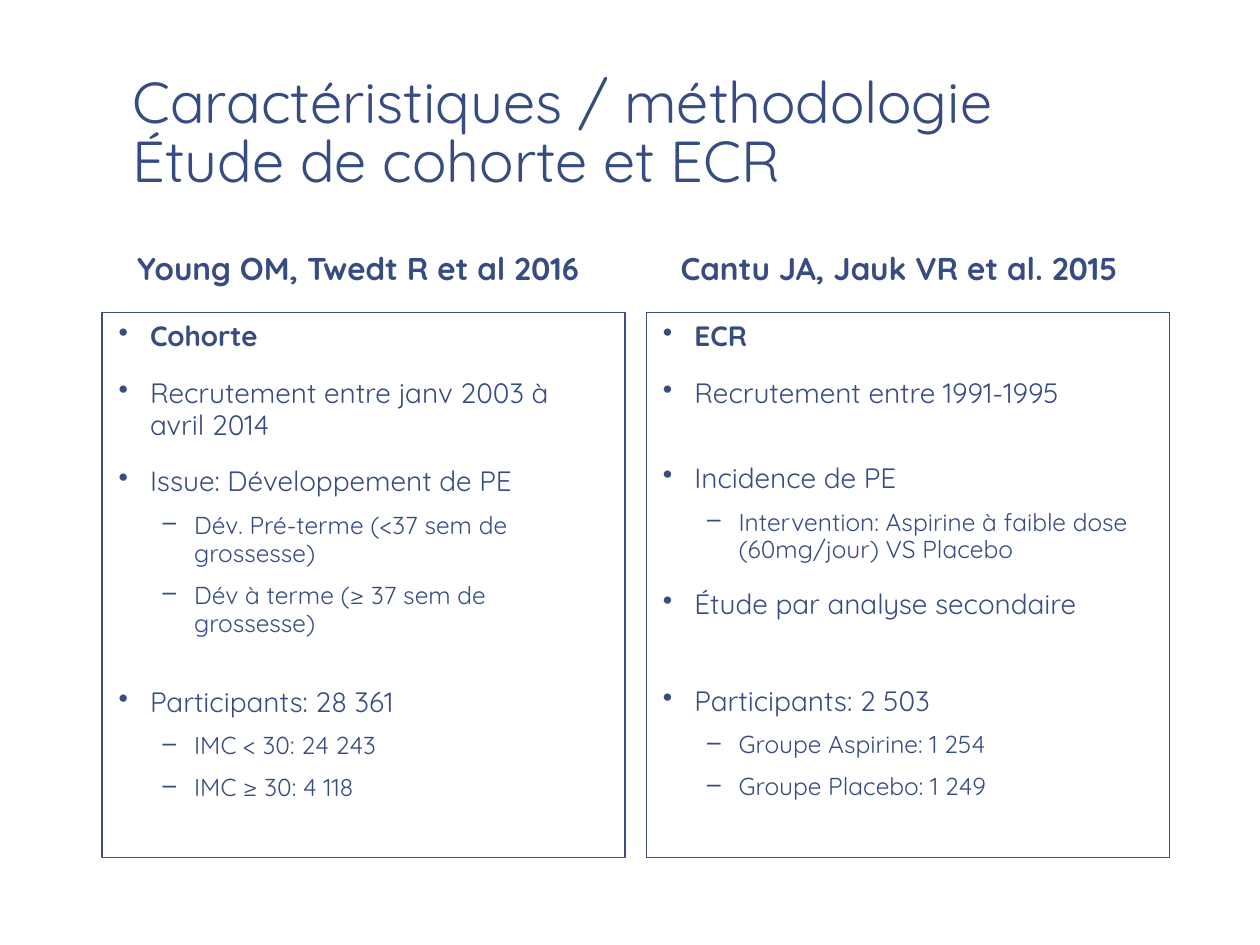
from lxml import etree
from pptx import Presentation
from pptx.dml.color import RGBColor
from pptx.enum.text import MSO_ANCHOR
from pptx.oxml.ns import qn
from pptx.util import Pt

TOP = MSO_ANCHOR.TOP
LOW = MSO_ANCHOR.BOTTOM
FONT = "Quicksand"
INK = "374C81"
EDGE = "414E77"
LEVELS = [
    {"mark": "•", "left": 18, "size": 16, "gap": 14},
    {"mark": "–", "left": 43.2, "size": 14, "gap": 8},
]
HANG = 18


def color(code):
    return RGBColor.from_string(code)


def apply(target, values):
    for name, value in values.items():
        setattr(target, name, value)


class Deck:
    def __init__(self):
        self.show = Presentation()
        apply(self.show, {"slide_width": Pt(720), "slide_height": Pt(540)})
        self.slide = self.show.slides.add_slide(self.show.slide_layouts[6])

    def frame(self, area, anchor):
        box = self.slide.shapes.add_textbox(*map(Pt, area))
        apply(box.text_frame, {
            "word_wrap": True, "vertical_anchor": anchor,
            "margin_left": Pt(9.4), "margin_right": Pt(9.4),
            "margin_top": Pt(5), "margin_bottom": Pt(5),
        })
        return box

    def fill(self, para, text, size, bold, lead):
        para.text = text
        para.line_spacing = lead
        for run in para.runs:
            apply(run.font, {"name": FONT, "size": Pt(size), "bold": bold})
            run.font.color.rgb = color(INK)

    def label(self, area, text, size, bold, lead):
        box = self.frame(area, LOW)
        self.fill(box.text_frame.paragraphs[0], text, size, bold, lead)

    def panel(self, area, items):
        box = self.frame(area, TOP)
        box.line.color.rgb = color(EDGE)
        box.line.width = Pt(0.75)
        body = box.text_frame
        for i, (level, text, *gap) in enumerate(items):
            para = body.add_paragraph() if i else body.paragraphs[0]
            self.bullet(para, level)
            style = LEVELS[level]
            self.fill(para, text, style["size"], i == 0, 0.95)
            if i:
                para.space_before = Pt(gap[0] if gap else style["gap"])

    def bullet(self, para, level):
        para.level = level
        style = LEVELS[level]
        props = para._p.get_or_add_pPr()
        props.set("marL", str(Pt(style["left"])))
        props.set("indent", str(-Pt(HANG)))
        etree.SubElement(props, qn("a:buChar")).set("char", style["mark"])


def main():
    deck = Deck()
    deck.label((66.25, 5.75, 600, 110.2),
               "Caractéristiques / méthodologie\vÉtude de cohorte et ECR",
               33, False, 0.85)
    cohort = [
        (0, "Cohorte"),
        (0, "Recrutement entre janv 2003 à avril 2014"),
        (0, "Issue: Développement de PE"),
        (1, "Dév. Pré-terme (<37 sem de grossesse)"),
        (1, "Dév à terme (≥ 37 sem de grossesse)"),
        (0, "Participants: 28 361", 28),
        (1, "IMC < 30: 24 243"),
        (1, "IMC ≥ 30: 4 118"),
    ]
    trial = [
        (0, "ECR"),
        (0, "Recrutement entre 1991-1995"),
        (0, "Incidence de PE", 30.4),
        (1, "Intervention: Aspirine à faible dose (60mg/jour) VS Placebo"),
        (0, "Étude par analyse secondaire"),
        (0, "Participants: 2 503", 37),
        (1, "Groupe Aspirine: 1 254"),
        (1, "Groupe Placebo: 1 249"),
    ]
    studies = [
        ("Young OM, Twedt R et al 2016", 69, 58.3, cohort),
        ("Cantu JA, Jauk VR et al. 2015", 379.5, 369.4, trial),
    ]
    for name, head, left, items in studies:
        deck.label((head, 128.9, 279, 40.3), name, 18, True, 0.95)
        deck.panel((left, 178.6, 298.8, 311.5), items)
    deck.show.save("out.pptx")


if __name__ == "__main__":
    main()
